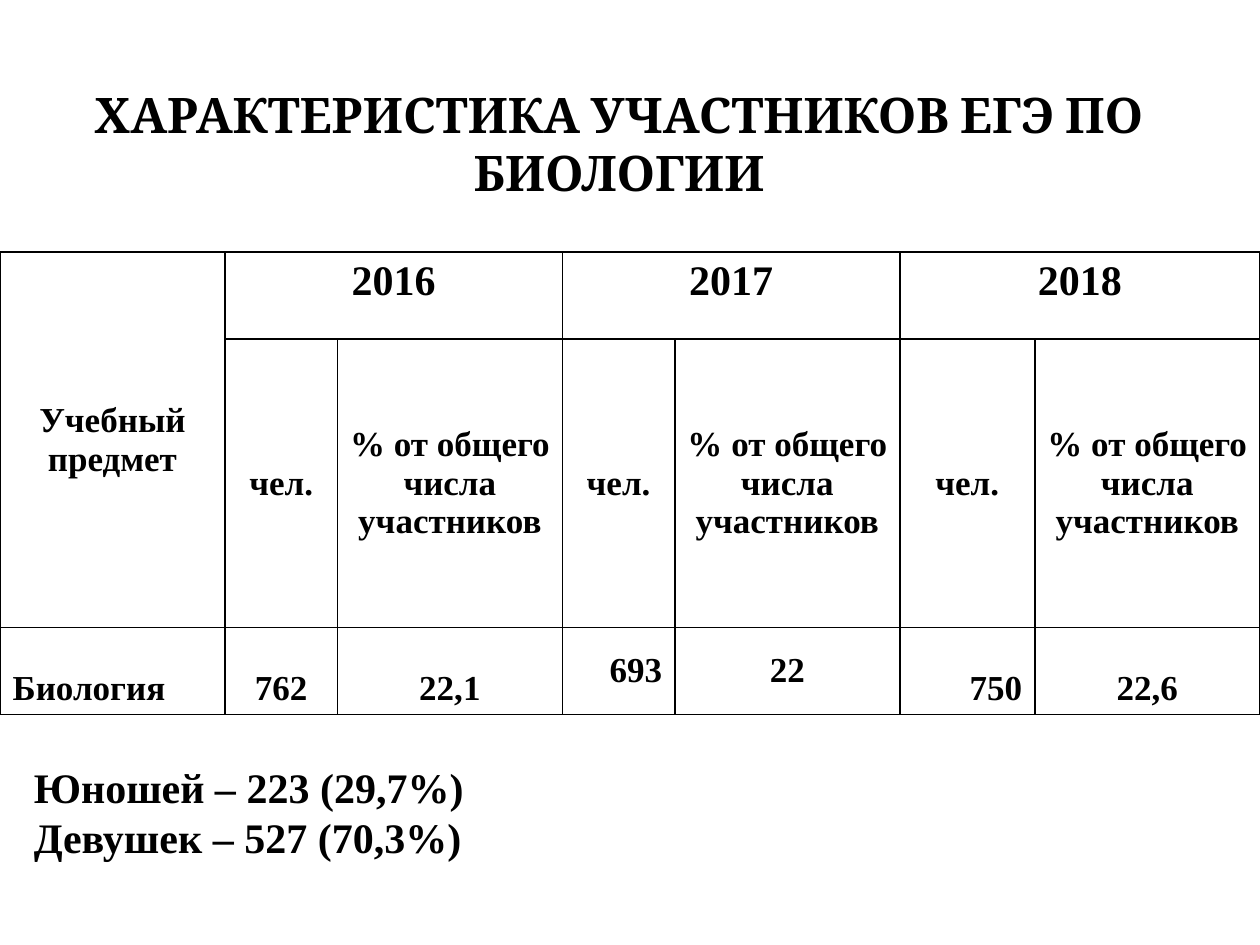
from dataclasses import dataclass

from lxml.etree import SubElement, Element
from pptx import Presentation
from pptx.dml.color import RGBColor
from pptx.enum.text import MSO_ANCHOR as Anchor, PP_ALIGN as Align
from pptx.oxml.ns import qn
from pptx.util import Inches, Pt

WIDTH, HEIGHT = 10, 7.5
BLACK, WHITE = "000000", "FFFFFF"
SERIF, TITLE_FONT = "Times New Roman", "Cambria"

# Table grid: column shares add up to the slide width
COLUMN_SHARES = (20, 10, 20, 10, 20, 12, 20)
ROW_HEIGHTS = (0.69, 2.29, 0.69)
TABLE_TOP = 2
YEARS = ("2016", "2017", "2018")


@dataclass
class Entry:
    """One table cell, with the number of rows and columns it covers."""
    row: int
    column: int
    lines: tuple[str, ...]
    size: int = 20
    align: Align = Align.CENTER
    anchor: Anchor = Anchor.MIDDLE
    rows: int = 1
    columns: int = 1


@dataclass
class TextBlock:
    """A free text box; margins are left, top, right, bottom."""
    left: float
    top: float
    width: float
    height: float
    lines: tuple[str, ...]
    size: int
    font: str
    align: Align
    margins: tuple[float, float, float, float]


def color(value: str) -> RGBColor:
    return RGBColor.from_string(value)


def write_lines(frame, lines: tuple[str, ...], size: int, font: str, align: Align) -> None:
    for index, line in enumerate(lines):
        para = frame.add_paragraph() if index else frame.paragraphs[0]
        para.alignment = align
        span = para.add_run()
        span.text = line
        span.font.size, span.font.name, span.font.bold = Pt(size), font, True
        span.font.color.rgb = color(BLACK)


def draw_text(slide, block: TextBlock) -> None:
    box = slide.shapes.add_textbox(*map(Inches, (block.left, block.top, block.width, block.height)))
    frame = box.text_frame
    frame.word_wrap = True
    frame.vertical_anchor = Anchor.MIDDLE
    (frame.margin_left, frame.margin_top,
     frame.margin_right, frame.margin_bottom) = map(Inches, block.margins)
    write_lines(frame, block.lines, block.size, block.font, block.align)


def style_cell(cell) -> None:
    cell.fill.solid()
    cell.fill.fore_color.rgb = color(WHITE)
    properties = cell._tc.get_or_add_tcPr()
    # Borders must come before the fill
    for index, side in enumerate(("a:lnL", "a:lnR", "a:lnT", "a:lnB")):
        line = Element(qn(side), w=str(Pt(1)))
        fill = SubElement(line, qn("a:solidFill"))
        SubElement(fill, qn("a:srgbClr"), val=BLACK)
        properties.insert(index, line)


def draw_table(slide, entries: list[Entry]) -> None:
    frame = slide.shapes.add_table(
        len(ROW_HEIGHTS), len(COLUMN_SHARES), 0, Inches(TABLE_TOP),
        Inches(WIDTH), Inches(sum(ROW_HEIGHTS)))
    table = frame.table
    table.first_row = table.horz_banding = False
    for column, share in zip(table.columns, COLUMN_SHARES):
        column.width = Inches(WIDTH * share / sum(COLUMN_SHARES))
    for row, height in zip(table.rows, ROW_HEIGHTS):
        row.height = Inches(height)
    for cell in table.iter_cells():
        style_cell(cell)
    for entry in entries:
        cell = table.cell(entry.row, entry.column)
        if entry.rows > 1 or entry.columns > 1:
            cell.merge(table.cell(entry.row + entry.rows - 1,
                                  entry.column + entry.columns - 1))
        cell.vertical_anchor = entry.anchor
        write_lines(cell.text_frame, entry.lines, entry.size, SERIF, entry.align)


def table_entries() -> list[Entry]:
    # Header: subject, then a pair of columns for each year
    entries = [Entry(0, 0, ("Учебный", "предмет"), rows=2)]
    for index, year in enumerate(YEARS):
        column = 1 + 2 * index
        entries += [
            Entry(0, column, (year,), size=24, anchor=Anchor.TOP, columns=2),
            Entry(1, column, ("чел.",)),
            Entry(1, column + 1, ("% от общего числа участников",)),
        ]
    # Results
    results = (
        ("Биология", Align.LEFT, Anchor.BOTTOM),
        ("762", Align.CENTER, Anchor.BOTTOM),
        ("22,1", Align.CENTER, Anchor.BOTTOM),
        ("693", Align.RIGHT, Anchor.MIDDLE),
        ("22", Align.CENTER, Anchor.MIDDLE),
        ("750", Align.RIGHT, Anchor.BOTTOM),
        ("22,6", Align.CENTER, Anchor.BOTTOM),
    )
    for column, (value, align, anchor) in enumerate(results):
        entries.append(Entry(2, column, (value,), align=align, anchor=anchor))
    return entries


def main() -> None:
    deck = Presentation()
    deck.slide_width, deck.slide_height = Inches(WIDTH), Inches(HEIGHT)
    page = deck.slides.add_slide(deck.slide_layouts[6])

    # Title
    draw_text(page, TextBlock(
        0, 0.53, 9.67, 1.07, ("ХАРАКТЕРИСТИКА УЧАСТНИКОВ ЕГЭ ПО БИОЛОГИИ",),
        28, TITLE_FONT, Align.CENTER, (0.25, 0.14, 0.1, 0)))

    draw_table(page, table_entries())

    # Participants by gender
    draw_text(page, TextBlock(
        0.17, 5.76, 9.5, 1.13, ("Юношей – 223 (29,7%)", "Девушек – 527 (70,3%)"),
        24, SERIF, Align.LEFT, (0.1, 0.28, 0.1, 0.05)))

    deck.save("out.pptx")


if __name__ == "__main__":
    main()
